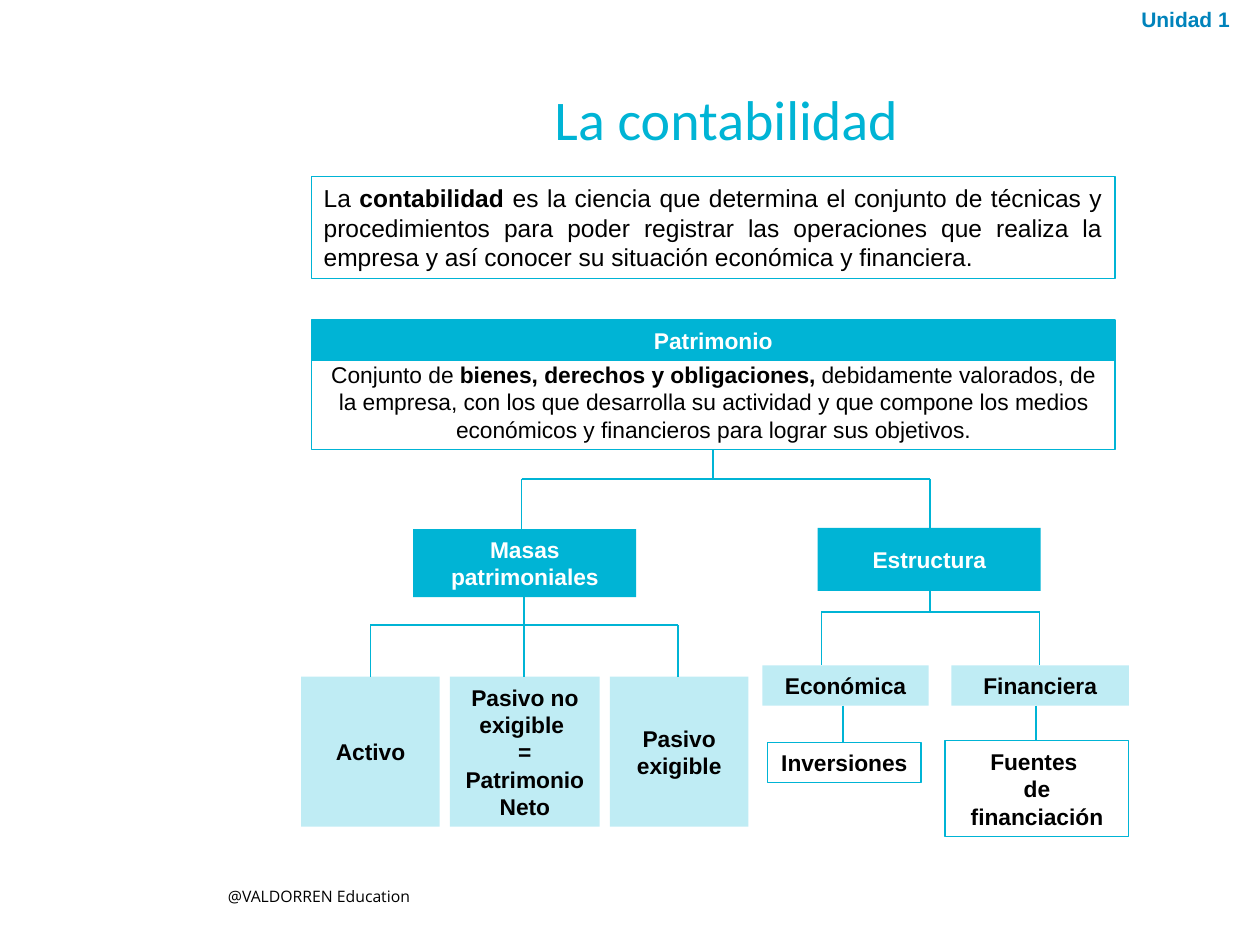
from pptx import Presentation
from pptx.dml.color import RGBColor
from pptx.enum.shapes import MSO_CONNECTOR as Connector, MSO_SHAPE as Shape
from pptx.enum.text import MSO_ANCHOR as Anchor, PP_ALIGN as Align
from pptx.oxml.ns import qn
from pptx.util import Inches, Pt
from lxml.etree import SubElement

COLORS = {"cyan": "00B4D5", "blue": "0083BB", "white": "FFFFFF", "black": "000000"}

# Grid of 100 columns by 75 rows; frames are left, top, width, height
COLUMNS, ROWS = 100, 75
CELL = Inches(10) / COLUMNS

# Box styles: fill, fill opacity in percent, outline, text colour, bold
STYLES = {
    "text": ("white", 100, True, "black", False),
    "heading": ("cyan", 100, True, "white", True),
    "branch": ("cyan", 100, False, "white", True),
    "leaf": ("cyan", 25, False, "black", True),
    "outlined": (None, 100, True, "black", True),
}

# Labels: frame, text, font, size, colour, bold, alignment
LABELS = [
    ((17.1, 69.9, 19.2, 2.5), "@VALDORREN Education", "Open Sans", 9, "black", False, Align.LEFT),
    ((89.6, 0, 10.4, 3), "Unidad 1", "Arial", 12, "blue", True, Align.LEFT),
    ((15.3, 6.8, 84.7, 5.4), "La contabilidad", "Calibri", 32, "cyan", False, Align.CENTER),
]

# Definitions: frame, size, alignment, runs (text, bold)
DEFINITIONS = [
    ((24.7, 14, 63.8, 8.1), 14, Align.JUSTIFY, [
        ("La ", False), ("contabilidad ", True),
        ("es la ciencia que determina el conjunto de técnicas y procedimientos para poder "
         "registrar las operaciones que realiza la empresa y así conocer su situación "
         "económica y financiera.", False)]),
    ((24.7, 28.1, 63.8, 7.6), 13, Align.CENTER, [
        ("Conjunto de ", False), ("bienes, derechos y obligaciones, ", True),
        ("debidamente valorados, de la empresa, con los que desarrolla su actividad y que "
         "compone los medios económicos y financieros para lograr sus objetivos.", False)]),
]

# Diagram boxes: style, frame, paragraphs
BOXES = [
    ("heading", (24.7, 25.4, 63.8, 3.2), ["Patrimonio"]),
    ("branch", (32.8, 42, 17.7, 5.4), ["Masas patrimoniales"]),
    ("branch", (64.9, 41.9, 17.7, 5), ["Estructura"]),
    ("leaf", (23.9, 53.7, 11, 11.9), ["Activo"]),
    ("leaf", (35.7, 53.7, 11.9, 11.9), ["Pasivo no exigible ", "= Patrimonio Neto"]),
    ("leaf", (48.4, 53.7, 11, 11.9), ["Pasivo exigible"]),
    ("leaf", (60.5, 52.8, 13.2, 3.2), ["Económica"]),
    ("leaf", (75.5, 52.8, 14.1, 3.2), ["Financiera"]),
    ("outlined", (60.9, 58.9, 12.2, 3.2), ["Inversiones"]),
    ("outlined", (75, 58.8, 14.6, 7.6), ["Fuentes ", "de financiación"]),
]

# Brackets: parent column, parent bottom, bar row, child columns, child top
BRACKETS = [
    (56.6, 35.7, 38, [41.4, 73.8], 42),
    (41.6, 47.4, 49.6, [29.4, 41.6, 53.8], 53.7),
    (73.8, 46.9, 48.6, [65.2, 82.5], 52.8),
]
# Straight links: column, top, bottom
LINKS = [(66.9, 56, 58.9), (82.2, 56, 58.8)]


def grid(*values):
    return [round(value * CELL) for value in values]


def color(name):
    return RGBColor.from_string(COLORS[name])


def add_run(paragraph, text, font_name, size, color_name, bold):
    run = paragraph.add_run()
    run.text = text
    run.font.name, run.font.size, run.font.bold = font_name, Pt(size), bold
    run.font.color.rgb = color(color_name)


def add_box(slide, style, frame, size, alignment, paragraphs):
    """Draw a rectangle; each paragraph is a list of (text, bold) runs."""
    fill, opacity, outlined, text_color, _ = STYLES[style]
    shape = slide.shapes.add_shape(Shape.RECTANGLE, *grid(*frame))
    shape.shadow.inherit = False
    if fill:
        shape.fill.solid()
        shape.fill.fore_color.rgb = color(fill)
        if opacity < 100:
            solid = shape.fill._xPr.find(qn("a:solidFill"))
            SubElement(solid[0], qn("a:alpha"), val=str(opacity * 1000))
    else:
        shape.fill.background()
    if outlined:
        shape.line.color.rgb = color("cyan")
        shape.line.width = Pt(0.75)
    else:
        shape.line.fill.background()
    text_frame = shape.text_frame
    text_frame.word_wrap, text_frame.vertical_anchor = True, Anchor.MIDDLE
    for index, runs in enumerate(paragraphs):
        paragraph = text_frame.add_paragraph() if index else text_frame.paragraphs[0]
        paragraph.alignment = alignment
        for text, bold in runs:
            add_run(paragraph, text, "Arial", size, text_color, bold)


def add_line(slide, x1, y1, x2, y2):
    line = slide.shapes.add_connector(Connector.STRAIGHT, *grid(x1, y1, x2, y2))
    line.line.color.rgb = color("cyan")
    line.line.width = Pt(1)
    SubElement(line._element.spPr, qn("a:effectLst"))


def main():
    presentation = Presentation()
    presentation.slide_width, presentation.slide_height = grid(COLUMNS, ROWS)
    slide = presentation.slides.add_slide(presentation.slide_layouts[6])

    # Title, unit and footer
    for frame, text, font_name, size, color_name, bold, alignment in LABELS:
        text_frame = slide.shapes.add_textbox(*grid(*frame)).text_frame
        text_frame.word_wrap = True
        paragraph = text_frame.paragraphs[0]
        paragraph.alignment = alignment
        if size > 30:
            paragraph.line_spacing = 0.9
        add_run(paragraph, text, font_name, size, color_name, bold)

    # Definitions and diagram boxes
    for frame, size, alignment, runs in DEFINITIONS:
        add_box(slide, "text", frame, size, alignment, [runs])
    for style, frame, texts in BOXES:
        bold = STYLES[style][-1]
        add_box(slide, style, frame, 13, Align.CENTER, [[(text, bold)] for text in texts])

    # Lines of the tree
    for parent, bottom, bar, children, top in BRACKETS:
        add_line(slide, parent, bottom, parent, bar)
        add_line(slide, children[0], bar, children[-1], bar)
        for child in children:
            add_line(slide, child, bar, child, top)
    for column, top, bottom in LINKS:
        add_line(slide, column, top, column, bottom)

    presentation.save("out.pptx")


if __name__ == "__main__":
    main()
